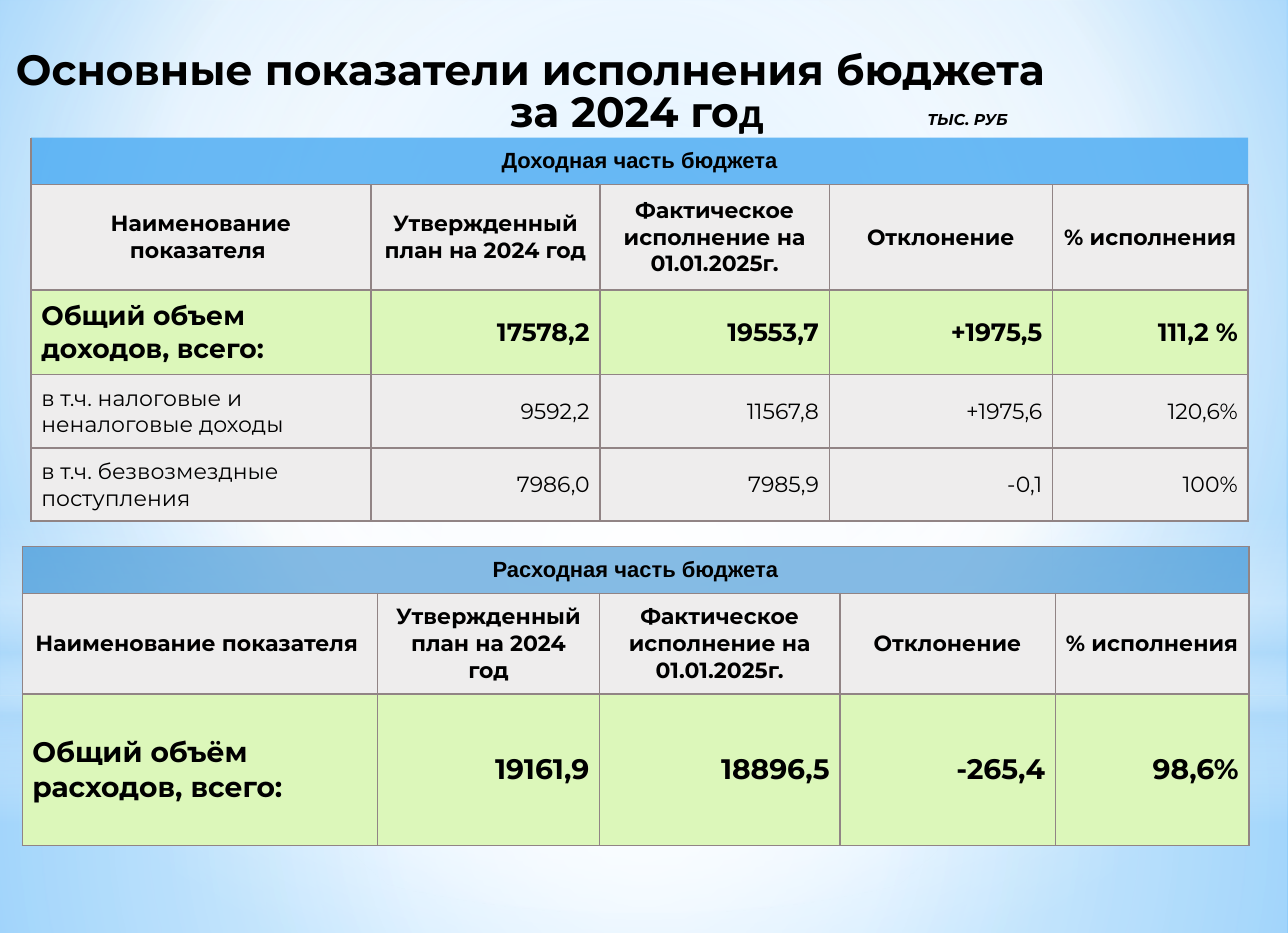
import pptx
import pptx.util
import pptx.dml.color
import pptx.enum.shapes
import pptx.enum.text
import pptx.oxml
import pptx.oxml.ns
import lxml.etree

Cm = pptx.util.Cm
Pt = pptx.util.Pt
qn = pptx.oxml.ns.qn
sub = lxml.etree.SubElement
left, center, right = (
    pptx.enum.text.PP_ALIGN.LEFT,
    pptx.enum.text.PP_ALIGN.CENTER,
    pptx.enum.text.PP_ALIGN.RIGHT,
)


def color(code):
    return pptx.dml.color.RGBColor.from_string(code)


def shade(grad, stops, focus):
    for child in list(grad):
        grad.remove(child)
    group = sub(grad, qn("a:gsLst"))
    for place, code, alpha in stops:
        stop = sub(group, qn("a:gs"), pos=str(place * 1000))
        tint = sub(stop, qn("a:srgbClr"), val=code)
        if alpha < 100:
            sub(tint, qn("a:alpha"), val=str(alpha * 1000))
    if focus:
        route = sub(grad, qn("a:path"), {"path": "circle"})
        sides = {side: str(part * 1000) for side, part in zip("ltrb", focus)}
        sub(route, qn("a:fillToRect"), sides)
    else:
        sub(grad, qn("a:lin"), ang="5400000", scaled="0")


deck = pptx.Presentation()
deck.slide_width, deck.slide_height = Cm(29), Cm(21)
slide = deck.slides.add_slide(deck.slide_layouts[6])

slide.background.fill.gradient()
shade(
    slide.background._cSld.find(".//" + qn("a:gradFill")),
    [(0, "9ED5FF", 100), (60, "FFFFFF", 100), (100, "5BB9FF", 100)],
    (20, 10, 20, 60),
)

kinds = pptx.enum.shapes.MSO_SHAPE
middle = (50, 50, 50, 50)
layers = [
    (kinds.RECTANGLE, 15.65, 5.35, middle,
     [(0, "FFFFFF", 91), (37, "FFFFFF", 76), (100, "B4DCFA", 79)]),
    (kinds.RECTANGLE, 0, 15.65, middle,
     [(0, "FFFFFF", 89), (48, "FFFFFF", 62), (100, "B4DCFA", 79)]),
    (kinds.RECTANGLE, 11.53, 7.01, None,
     [(0, "FFFFFF", 0), (29, "FFFFFF", 30), (45, "B4DCFA", 40),
      (55, "FFFFFF", 26), (65, "B4DCFA", 60), (100, "FFFFFF", 0)]),
    (kinds.OVAL, 4.9, 15.65, middle,
     [(0, "FFFFFF", 100), (56, "FFFFFF", 0)]),
]
for kind, top, height, focus, stops in layers:
    layer = slide.shapes.add_shape(kind, 0, Cm(top), Cm(29), Cm(height))
    layer.shadow.inherit = False
    layer.line.fill.background()
    layer.fill.gradient()
    shade(layer._element.spPr.find(qn("a:gradFill")), stops, focus)

titles = [
    (0.36, 1.2, 26, 27, False,
     [("Основные показатели исполнения бюджета", "Montserrat")]),
    (11.48, 2.13, 8, 27, False,
     [("за 2024 го", "Montserrat"), ("д", "Calibri")]),
    (20.88, 2.47, 3, 10, True, [("ТЫС. РУБ", "Montserrat")]),
]
for x, top, width, size, slant, parts in titles:
    box = slide.shapes.add_textbox(Cm(x), Cm(top), Cm(width), Cm(0.93))
    frame = box.text_frame
    frame.word_wrap = True
    frame.margin_left = frame.margin_right = 0
    frame.margin_top = frame.margin_bottom = 0
    line = frame.paragraphs[0]
    line.line_spacing = 0.8 if size == 27 else 1.0
    for text, face in parts:
        run = line.add_run()
        run.text = text
        run.font.name = face
        run.font.size = Pt(size)
        run.font.bold = True
        run.font.italic = slant
        run.font.color.rgb = color("000000")

heads = ["Наименование показателя ", "Утвержденный план на 2024 год",
         "Фактическое исполнение на 01.01.2025г.", "Отклонение", "% исполнения"]
tables = [
    (0.7, 3.1, [7.65, 5.16, 5.16, 5.03, 4.4], [0.99, 2.37, 1.91, 1.64, 1.64],
     "4FADF3", 84, "LB", 17, 16,
     [["Доходная часть бюджета", "", "", "", ""], heads,
      ["Общий объем доходов, всего:", "17578,2", "19553,7", "+1975,5", "111,2 %"],
      ["в т.ч. налоговые и неналоговые доходы", "9592,2", "11567,8", "+1975,6", "120,6%"],
      ["в т.ч. безвозмездные поступления", "7986,0", "7985,9", "-0,1", "100%"]]),
    (0.5, 12.3, [8, 5, 5.41, 4.85, 4.36], [0.99, 2.27, 3.41],
     "0D79CA", 50, "LRTB", 18, 18,
     [["Расходная часть бюджета", "", "", "", ""], heads,
      ["Общий объём расходов, всего:", "19161,9", "18896,5", "-265,4", "98,6%"]]),
]
for x, top, widths, heights, band, alpha, edges, big, sum_size, rows in tables:
    table = slide.shapes.add_table(
        len(rows), 5, Cm(x), Cm(top), Cm(sum(widths)), Cm(sum(heights))
    ).table
    table.first_row = table.horz_banding = False
    for col, width in zip(table.columns, widths):
        col.width = Cm(width)
    for row, height in zip(table.rows, heights):
        row.height = Cm(height)
    table.cell(0, 0).merge(table.cell(0, 4))
    for r, texts in enumerate(rows):
        for c, text in enumerate(texts):
            cell = table.cell(r, c)
            cell.margin_left = cell.margin_right = Cm(0.23)
            cell.margin_top = cell.margin_bottom = Cm(0.23)
            cell.vertical_anchor = pptx.enum.text.MSO_ANCHOR.MIDDLE
            cell.fill.solid()
            cell.fill.fore_color.rgb = color(
                band if r == 0 else "DCF7BA" if r == 2 else "EEEDED"
            )
            props = cell._tc.tcPr
            if r == 0:
                tint = props.find(".//" + qn("a:srgbClr"))
                sub(tint, qn("a:alpha"), val=str(alpha * 1000))
            for n, side in enumerate("LRTB"):
                edge = pptx.oxml.ns.qn("a:ln" + side)
                rule = lxml.etree.Element(edge, w="12700")
                if r == 0 and side not in edges:
                    sub(rule, qn("a:noFill"))
                else:
                    ink = sub(rule, qn("a:solidFill"))
                    sub(ink, qn("a:srgbClr"), val="918485")
                props.insert(n, rule)
            if not text:
                continue
            line = cell.text_frame.paragraphs[0]
            line.alignment = center if r < 2 else right if c else left
            run = line.add_run()
            run.text = text
            run.font.name = "Montserrat" if r else "Arial"
            run.font.size = Pt(14 if r != 2 else sum_size if c else big)
            run.font.bold = r < 3
            run.font.color.rgb = color("000000")

deck.save("out.pptx")
